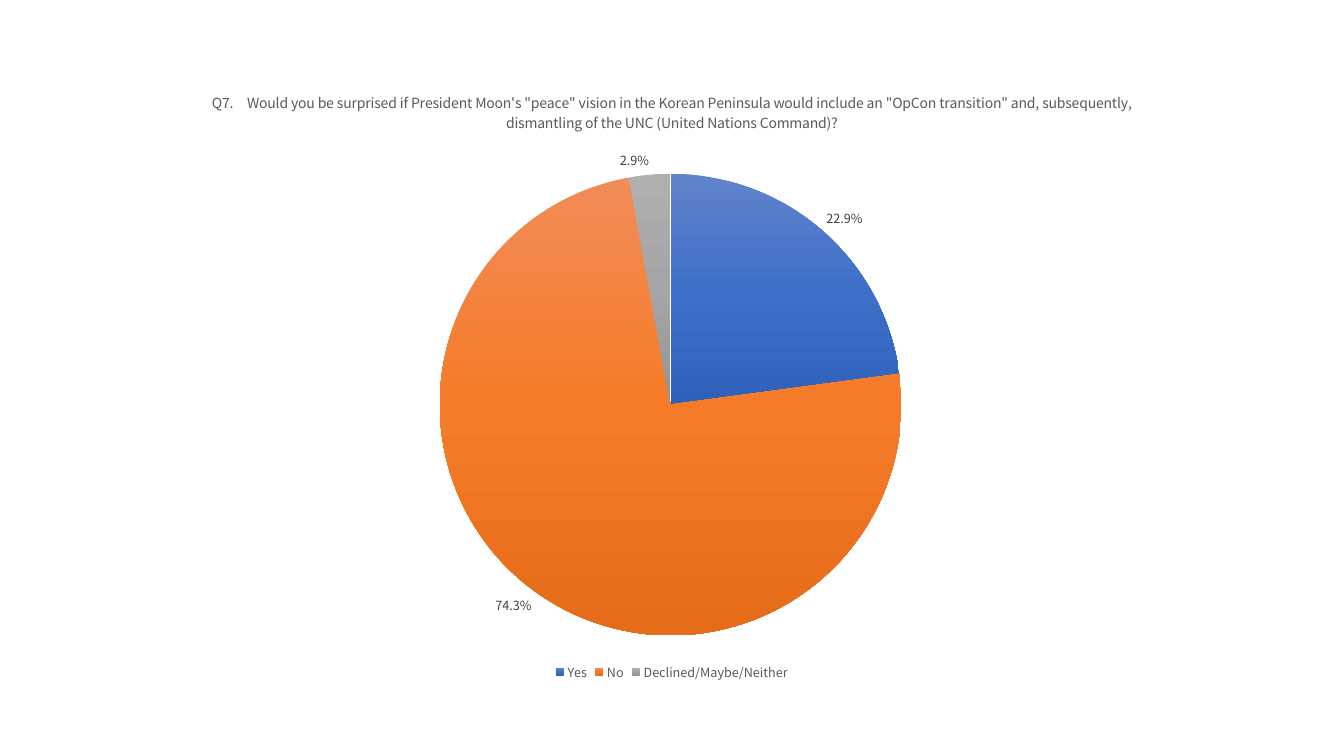
from copy import deepcopy
from dataclasses import dataclass

from lxml.etree import SubElement
from pptx import Presentation
from pptx.chart.data import CategoryChartData
from pptx.dml.color import RGBColor
from pptx.enum.chart import XL_CHART_TYPE as ChartType
from pptx.enum.chart import XL_LABEL_POSITION as LabelPosition
from pptx.enum.chart import XL_LEGEND_POSITION as LegendPosition
from pptx.oxml.ns import qn
from pptx.util import Cm, Pt


@dataclass(frozen=True)
class Theme:
    font: str = "Noto Sans CJK KR"
    title_size: int = 10
    label_size: int = 9
    text: str = "595959"
    label: str = "404040"
    slices: tuple = (
        ("6183CB", "3E70CA", "3062BB"),
        ("F18C57", "F67B28", "E56C19"),
        ("AFAFAF", "A5A5A5", "939393"),
    )


THEME = Theme()
QUESTION = (
    "Q7. Would you be surprised if President Moon's \"peace\" vision in the "
    "Korean Peninsula would include an \"OpCon transition\" and, subsequently, "
    "dismantling of the UNC (United Nations Command)?"
)
ANSWERS = {"Yes": 0.229, "No": 0.743, "Declined/Maybe/Neither": 0.029}
PIE_AREA = {"x": 0.307, "y": 0.168, "w": 0.384, "h": 0.752}


def style_font(font, size, color):
    font.name = THEME.font
    font.size = Pt(size)
    font.bold = False
    font.color.rgb = RGBColor.from_string(color)


def add_pie(page, left, top, width, height):
    data = CategoryChartData(number_format="0.0%")
    data.categories = list(ANSWERS)
    data.add_series(QUESTION, list(ANSWERS.values()))
    frame = page.shapes.add_chart(ChartType.PIE, left, top, width, height, data)
    return frame.chart


def add_title(chart):
    chart.has_title = True
    chart.chart_title.include_in_layout = False
    para = chart.chart_title.text_frame.paragraphs[0]
    number, question = QUESTION.split(" ", 1)
    para.text = f"{number}\u2003{question}"
    style_font(para.font, THEME.title_size, THEME.text)


def add_legend(chart):
    chart.has_legend = True
    legend = chart.legend
    legend.position = LegendPosition.BOTTOM
    legend.include_in_layout = False
    style_font(legend.font, THEME.label_size, THEME.text)


def add_labels(plot):
    plot.has_data_labels = True
    labels = plot.data_labels
    labels.show_value = True
    labels.show_percentage = False
    labels.number_format = "0.0%"
    labels.number_format_is_linked = False
    labels.position = LabelPosition.OUTSIDE_END
    style_font(labels.font, THEME.label_size, THEME.label)


def fill_gradient(fill, colors):
    fill.gradient()
    fill.gradient_angle = 270
    first = fill.gradient_stops[0]._gs
    first.addnext(deepcopy(first))
    for index, (stop, color) in enumerate(zip(fill.gradient_stops, colors)):
        stop.position = index / (len(colors) - 1)
        stop.color.rgb = RGBColor.from_string(color)


def color_slices(plot):
    plot.vary_by_categories = True
    for index, colors in enumerate(THEME.slices):
        point = plot.series[0].points[index]
        fill_gradient(point.format.fill, colors)
        point.format.line.fill.background()


def place_plot(chart):
    area = chart._chartSpace.chart.plotArea
    for layout in area.findall(qn("c:layout")):
        area.remove(layout)
    layout = SubElement(area, qn("c:layout"))
    area.insert(0, layout)
    manual = SubElement(layout, qn("c:manualLayout"))
    settings = {"layoutTarget": "inner", "xMode": "edge", "yMode": "edge", **PIE_AREA}
    for name, value in settings.items():
        SubElement(manual, qn(f"c:{name}")).set("val", str(value))


def main():
    deck = Presentation()
    deck.slide_width, deck.slide_height = Cm(33.87), Cm(19.05)
    page = deck.slides.add_slide(deck.slide_layouts[6])
    chart = add_pie(page, Cm(1.78), Cm(1.78), Cm(30.3), Cm(15.47))
    style_font(chart.font, THEME.title_size, THEME.text)
    add_title(chart)
    add_legend(chart)
    plot = chart.plots[0]
    add_labels(plot)
    color_slices(plot)
    place_plot(chart)
    deck.save("out.pptx")


if __name__ == "__main__":
    main()
